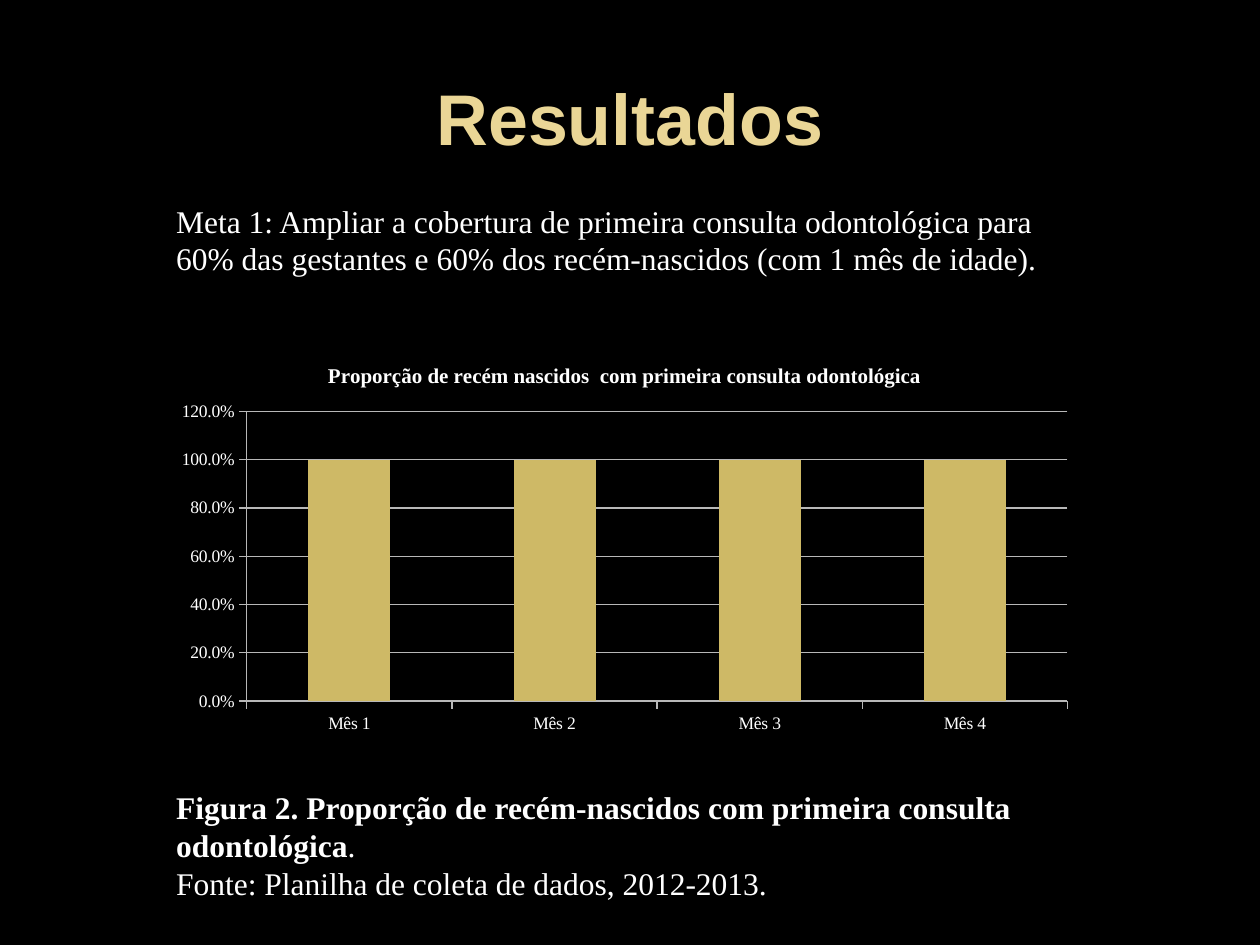
from dataclasses import dataclass

from lxml.etree import SubElement
from pptx import Presentation
from pptx.chart.data import CategoryChartData
from pptx.dml.color import RGBColor
from pptx.enum.chart import XL_CHART_TYPE, XL_TICK_MARK
from pptx.enum.text import MSO_ANCHOR, PP_ALIGN
from pptx.oxml.ns import qn
from pptx.util import Pt


@dataclass(frozen=True)
class Theme:
    background: RGBColor = RGBColor(0x00, 0x00, 0x00)
    heading: RGBColor = RGBColor(0xEA, 0xD6, 0x96)
    text: RGBColor = RGBColor(0xFF, 0xFF, 0xFF)
    bar: RGBColor = RGBColor(0xCE, 0xB9, 0x66)
    rule: RGBColor = RGBColor(0xB8, 0xB8, 0xB8)
    heading_font: str = "Arial"
    body_font: str = "Times New Roman"
    heading_size: int = 41
    body_size: int = 18
    chart_title_size: int = 12
    chart_size: int = 10


THEME = Theme()
LEFT = 93.6
CHART_TITLE = "Proporção de recém nascidos  com primeira consulta odontológica"
GOAL = ("Meta 1: Ampliar a cobertura de primeira consulta odontológica para "
        "60% das gestantes e 60% dos recém-nascidos (com 1 mês de idade).")
CAPTION = "Figura 2. Proporção de recém-nascidos com primeira consulta odontológica"
SOURCE = "Fonte: Planilha de coleta de dados, 2012-2013."


def style_font(font, name, size, color, bold=False):
    font.name = name
    font.size = Pt(size)
    font.bold = bold
    font.color.rgb = color


def place_heading(slide, box, wording):
    heading = slide.shapes.title
    heading.left, heading.top, heading.width, heading.height = map(Pt, box)
    frame = heading.text_frame
    frame.text = wording
    frame.vertical_anchor = MSO_ANCHOR.MIDDLE
    line = frame.paragraphs[0]
    line.alignment = PP_ALIGN.CENTER
    style_font(line.runs[0].font, THEME.heading_font, THEME.heading_size,
               THEME.heading, bold=True)


def place_text(slide, box, paragraphs):
    """Each paragraph is a list of (wording, bold) pairs."""
    frame = slide.shapes.add_textbox(*map(Pt, box)).text_frame
    frame.word_wrap = True
    for index, parts in enumerate(paragraphs):
        paragraph = frame.add_paragraph() if index else frame.paragraphs[0]
        for wording, bold in parts:
            run = paragraph.add_run()
            run.text = wording
            style_font(run.font, THEME.body_font, THEME.body_size, THEME.text, bold)


def fix_plot_area(chart, **fractions):
    """Set the inner plot area as fractions of the chart's box."""
    plot_area = chart.plots[0]._element.getparent()
    layout = plot_area.find(qn("c:layout"))
    if layout is None:
        layout = SubElement(plot_area, qn("c:layout"))
        plot_area.insert(0, layout)
    manual = SubElement(layout, qn("c:manualLayout"))
    settings = {"layoutTarget": "inner", "xMode": "edge", "yMode": "edge", **fractions}
    for tag, value in settings.items():
        SubElement(manual, qn(f"c:{tag}")).set("val", str(value))


def place_chart(slide, box):
    data = CategoryChartData(number_format="0.0%")
    data.categories = [f"Mês {month}" for month in range(1, 5)]
    data.add_series(CHART_TITLE, [1] * 4)
    chart = slide.shapes.add_chart(
        XL_CHART_TYPE.COLUMN_CLUSTERED, *map(Pt, box), data).chart
    style_font(chart.font, THEME.body_font, THEME.chart_size, THEME.text)
    chart.has_legend = False
    chart.has_title = True
    title_line = chart.chart_title.text_frame.paragraphs[0]
    title_line.text = CHART_TITLE
    style_font(title_line.runs[0].font, THEME.body_font, THEME.chart_title_size,
               THEME.text, bold=True)

    # Bars
    plot = chart.plots[0]
    plot.gap_width = 150
    plot.vary_by_categories = False
    bars = plot.series[0].format.fill
    bars.solid()
    bars.fore_color.rgb = THEME.bar

    # Axes and gridlines
    months, share = chart.category_axis, chart.value_axis
    share.minimum_scale, share.maximum_scale, share.major_unit = 0, 1.2, 0.2
    share.has_major_gridlines = True
    share.tick_labels.number_format = "0.0%"
    share.tick_labels.number_format_is_linked = False
    for axis in (months, share):
        axis.major_tick_mark = XL_TICK_MARK.OUTSIDE
    for rule in (months, share, share.major_gridlines):
        rule.format.line.color.rgb = THEME.rule
        rule.format.line.width = Pt(0.75)
    fix_plot_area(chart, x=0.09, y=0.17, w=0.89, h=0.73)


def main():
    deck = Presentation()
    deck.slide_width, deck.slide_height = Pt(720), Pt(540)
    slide = deck.slides.add_slide(deck.slide_layouts[5])
    slide.background.fill.solid()
    slide.background.fill.fore_color.rgb = THEME.background

    place_heading(slide, (36, 21.6, 648, 90), "Resultados")
    place_chart(slide, (LEFT, 196.6, 527, 226.8))
    place_text(slide, (LEFT, 111.6, 538.6, 51), [[(GOAL, False)]])
    place_text(slide, (LEFT, 447, 499, 72.7),
               [[(CAPTION, True), (".", False)], [(SOURCE, False)]])
    deck.save("out.pptx")


if __name__ == "__main__":
    main()
